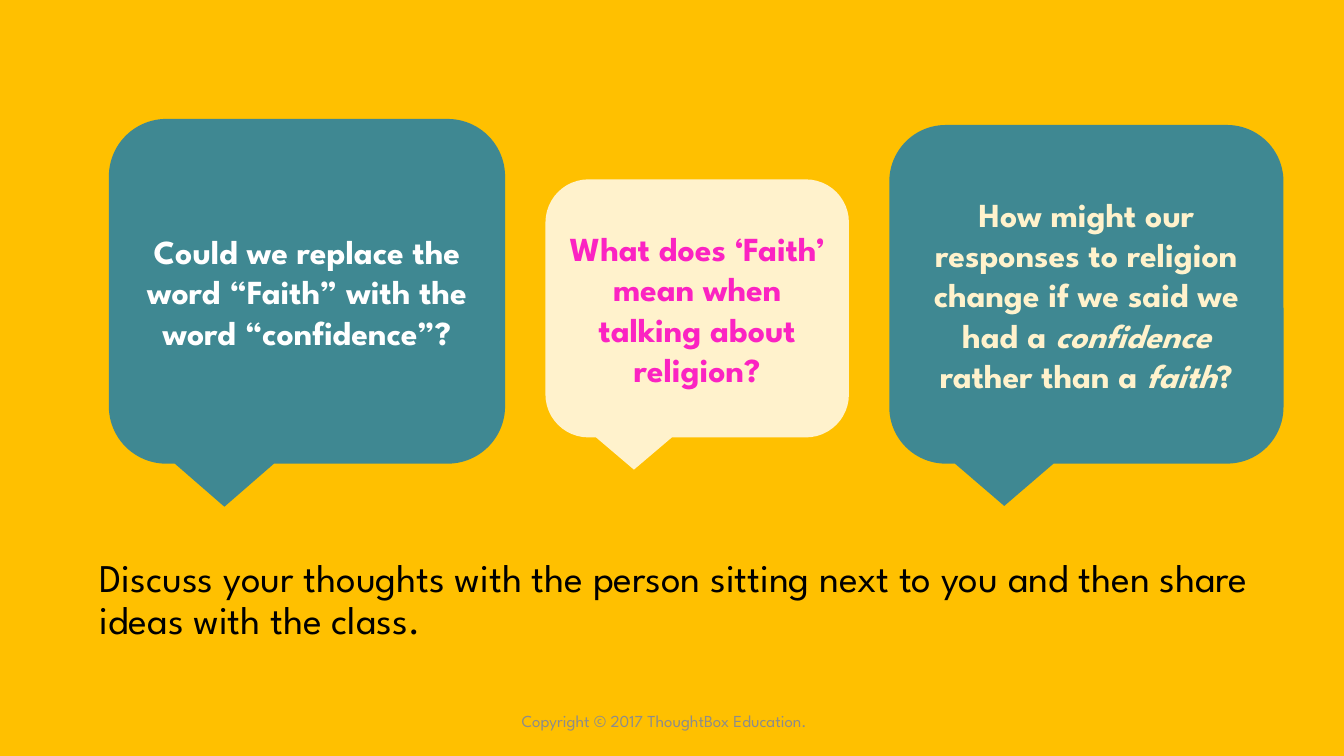
from pptx import Presentation
from pptx.dml.color import RGBColor
from pptx.enum.shapes import MSO_SHAPE as Shape
from pptx.enum.text import MSO_ANCHOR as Anchor, PP_ALIGN as Align
from pptx.util import Inches, Pt

AMBER = RGBColor(0xFF, 0xC0, 0x00)
TEAL = RGBColor(0x3F, 0x88, 0x92)
CREAM = RGBColor(0xFF, 0xF2, 0xCC)
PINK = RGBColor(0xFB, 0x23, 0xC2)
WHITE = RGBColor(0xFF, 0xFF, 0xFF)
BLACK = RGBColor(0x00, 0x00, 0x00)
GREY = RGBColor(0x8C, 0x8C, 0x8C)
FONT = "League Spartan"

# Content: runs are (text, italic); sizes are in inches
QUESTIONS = [
    dict(runs=[("Could we replace the word “Faith” with the word “confidence”?", False)],
         fill=TEAL, color=WHITE, top=1.18, width=3.93, height=3.42),
    dict(runs=[("What does ‘Faith’ mean when talking about religion?", False)],
         fill=CREAM, color=PINK, top=1.78, width=3.01, height=2.56),
    dict(runs=[("How might our responses to religion change if we said we had a ", False),
               ("confidence ", True), ("rather than a ", False),
               ("faith", True), ("?", False)],
         fill=TEAL, color=CREAM, top=1.24, width=3.91, height=3.36),
]
TASK = ("Discuss your thoughts with the person sitting next to you "
        "and then share ideas with the class.")
COPYRIGHT = "Copyright © 2017 ThoughtBox Education."

BUBBLES_LEFT, BUBBLE_GAP = 1.08, 0.4


def write(shape, runs, size, color, bold=False, align=Align.CENTER, anchor=Anchor.MIDDLE):
    """Fill a shape with one paragraph and return that paragraph."""
    frame = shape.text_frame
    frame.word_wrap = True
    frame.vertical_anchor = anchor
    paragraph = frame.paragraphs[0]
    paragraph.alignment = align
    for text, italic in runs:
        run = paragraph.add_run()
        run.text = text
        look = dict(name=FONT, size=Pt(size), bold=bold, italic=italic)
        for key, value in look.items():
            setattr(run.font, key, value)
        run.font.color.rgb = color
    return paragraph


def main():
    deck = Presentation()
    deck.slide_width, deck.slide_height = Inches(13.33), Inches(7.5)
    slide = deck.slides.add_slide(deck.slide_layouts[6])
    slide.background.fill.solid()
    slide.background.fill.fore_color.rgb = AMBER

    # Discussion task
    task = slide.shapes.add_textbox(*map(Inches, (0.89, 5.49, 11.83, 1.29)))
    task_line = write(task, [(TASK, False)], 28, BLACK, align=Align.LEFT, anchor=Anchor.TOP)
    task_line.line_spacing = 0.9

    # Copyright line
    footer = slide.shapes.add_textbox(*map(Inches, (4.34, 6.95, 4.5, 0.4)))
    write(footer, [(COPYRIGHT, False)], 12, GREY)

    # Speech bubbles, set side by side with an equal gap
    left = BUBBLES_LEFT
    for question in QUESTIONS:
        place = (left, question["top"], question["width"], question["height"])
        bubble = slide.shapes.add_shape(Shape.ROUNDED_RECTANGULAR_CALLOUT, *map(Inches, place))
        bubble.shadow.inherit = False
        bubble.fill.solid()
        bubble.fill.fore_color.rgb = question["fill"]
        bubble.line.fill.background()
        write(bubble, question["runs"], 24, question["color"], bold=True)
        left += question["width"] + BUBBLE_GAP

    deck.save("out.pptx")


if __name__ == "__main__":
    main()
